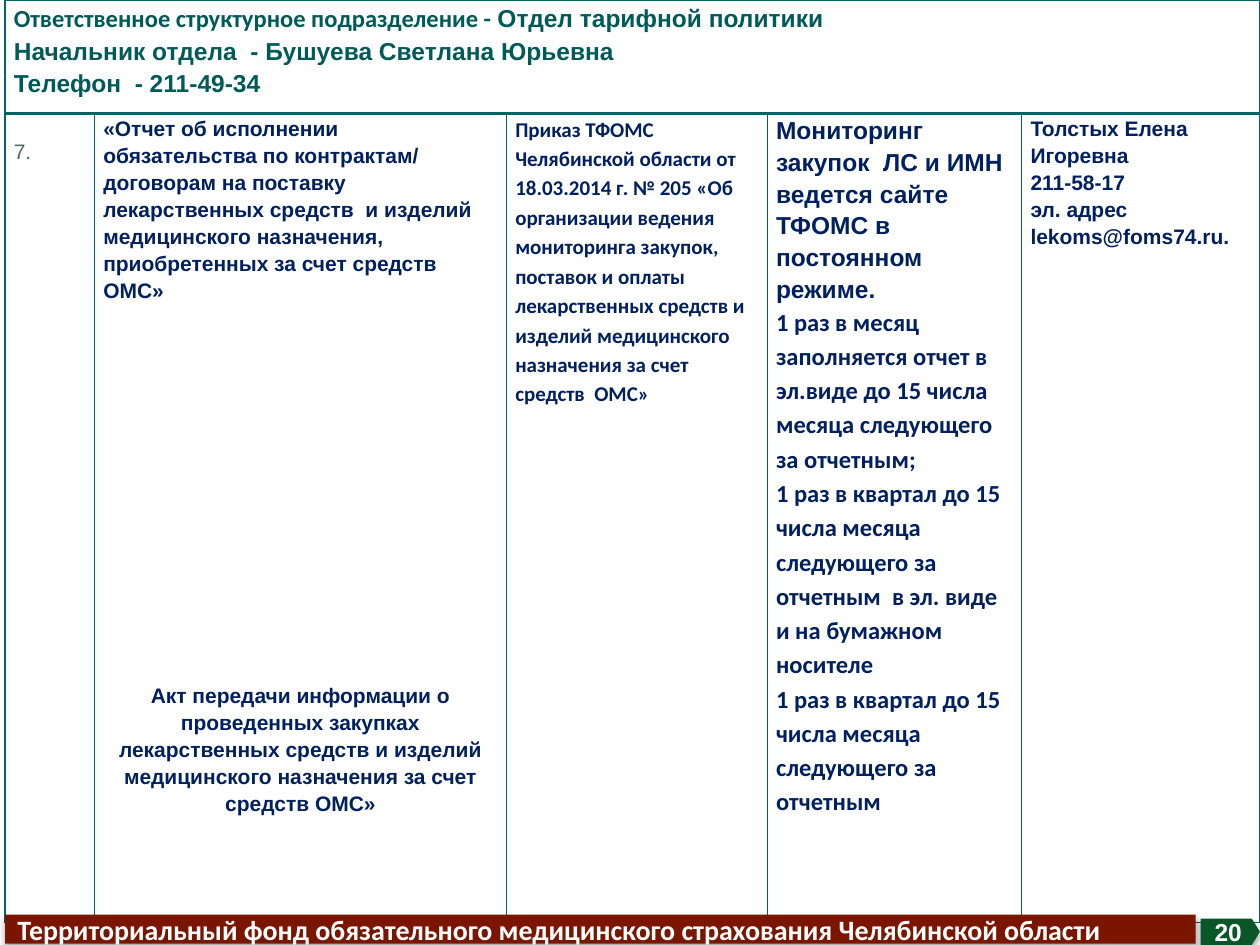
from lxml import etree
from pptx import Presentation
from pptx.dml.color import RGBColor
from pptx.enum.shapes import MSO_SHAPE
from pptx.enum.text import MSO_ANCHOR, PP_ALIGN
from pptx.oxml.ns import qn
from pptx.util import Inches, Pt

LEFT, CENTER = PP_ALIGN.LEFT, PP_ALIGN.CENTER
TOP, MIDDLE = MSO_ANCHOR.TOP, MSO_ANCHOR.MIDDLE
RECTANGLE, PENTAGON = MSO_SHAPE.RECTANGLE, MSO_SHAPE.PENTAGON

TEAL = RGBColor(0x00, 0x5A, 0x58)
BORDER = RGBColor(0x00, 0x64, 0x62)
GRAY = RGBColor(0x4D, 0x68, 0x68)
NAVY = RGBColor(0x00, 0x20, 0x60)
WHITE = RGBColor(0xFF, 0xFF, 0xFF)
MAROON = RGBColor(0x7A, 0x16, 0x00)
GREEN = RGBColor(0x09, 0x57, 0x29)
BLACK = RGBColor(0x00, 0x00, 0x00)

COLUMN_WIDTHS = [0.71, 3.27, 2.07, 2.02, 1.89]
ROW_HEIGHTS = [0.9, 6.42]

REPORT = ("«Отчет об исполнении  обязательства по контрактам/ договорам на поставку "
          "лекарственных средств  и изделий медицинского назначения, "
          "приобретенных за счет средств ОМС»")
ACT = ("Акт передачи информации о проведенных закупках лекарственных средств "
       "и изделий медицинского назначения за счет средств ОМС»")
ORDER = ("Приказ ТФОМС Челябинской области от 18.03.2014 г. № 205 «Об организации "
         "ведения мониторинга закупок, поставок и оплаты лекарственных средств "
         "и изделий медицинского назначения за счет средств  ОМС»")
MONITORING = "Мониторинг закупок  ЛС и ИМН  ведется сайте ТФОМС в постоянном режиме."
DEADLINES = [
    "1 раз в месяц заполняется отчет в  эл.виде до 15 числа месяца следующего за отчетным;",
    "1 раз в квартал до 15 числа месяца следующего за отчетным  в эл. виде "
    "и на бумажном носителе",
    "1 раз в квартал до 15 числа месяца следующего за отчетным",
]
CONTACTS = ["Толстых Елена Игоревна", "211-58-17", "эл. адрес lekoms@foms74.ru."]
FOOTER = "Территориальный фонд обязательного медицинского страхования Челябинской области"


def write(frame, text, size=12, font="Arial", color=NAVY, bold=True, align=LEFT,
          spacing=1.15, before=0, same_line=False):
    """Add text to a frame, in its last paragraph or in a new one."""
    paragraph = frame.paragraphs[-1]
    if paragraph.runs and not same_line:
        paragraph = frame.add_paragraph()
    paragraph.alignment = align
    paragraph.line_spacing = spacing
    paragraph.space_before = Pt(before)
    run = paragraph.add_run()
    run.text = text
    run.font.size = Pt(size)
    run.font.name = font
    run.font.bold = bold
    run.font.color.rgb = color


def set_borders(cell, **widths):
    """Draw cell borders; widths in points, keyed by side (L, R, T, B)."""
    properties = cell._tc.get_or_add_tcPr()
    for position, (side, width) in enumerate(widths.items()):
        line = etree.Element(qn(f"a:ln{side}"), w=str(Pt(width)))
        fill = etree.SubElement(line, qn("a:solidFill"))
        etree.SubElement(fill, qn("a:srgbClr"), val=str(BORDER))
        properties.insert(position, line)


def add_report_table(slide):
    table = slide.shapes.add_table(
        len(ROW_HEIGHTS), len(COLUMN_WIDTHS), Inches(0.04), 0,
        Inches(sum(COLUMN_WIDTHS)), Inches(sum(ROW_HEIGHTS))).table
    table.first_row = table.horz_banding = False
    for column, width in zip(table.columns, COLUMN_WIDTHS):
        column.width = Inches(width)
    for row, height in zip(table.rows, ROW_HEIGHTS):
        row.height = Inches(height)
    for cell in table.iter_cells():
        cell.margin_left = cell.margin_right = Inches(0.07)
        cell.margin_top = cell.margin_bottom = 0
        cell.vertical_anchor = TOP
        cell.fill.solid()
        cell.fill.fore_color.rgb = WHITE
    for header, body in zip(table.rows[0].cells, table.rows[1].cells):
        set_borders(header, L=1, R=1, T=1, B=2)
        set_borders(body, L=1, R=1, T=2, B=1)
    table.cell(0, 0).merge(table.cell(0, len(COLUMN_WIDTHS) - 1))
    return table


def fill_report_table(table):
    # Department
    department = table.cell(0, 0).text_frame
    write(department, "Ответственное структурное подразделение - ",
          size=14, font="Calibri", color=TEAL)
    write(department, "Отдел тарифной политики", size=14, color=TEAL, same_line=True)
    for line in ["Начальник отдела  - Бушуева Светлана Юрьевна", "Телефон  - 211-49-34"]:
        write(department, line, size=14, color=TEAL)

    # Report row
    number_cell = table.cell(1, 0)
    number_cell.margin_top = Inches(0.19)
    number, documents, order, schedule, contacts = [
        cell.text_frame for cell in table.rows[1].cells]
    write(number, "7.", color=GRAY, bold=False)
    write(documents, REPORT)
    write(documents, ACT, align=CENTER, before=216)
    write(order, ORDER, font="Calibri")
    write(schedule, MONITORING, size=14)
    for deadline in DEADLINES:
        write(schedule, deadline, size=14, font="Calibri")
    for line in CONTACTS:
        write(contacts, line)


def add_shadow(shape):
    effects = etree.SubElement(shape._element.spPr, qn("a:effectLst"))
    shadow = etree.SubElement(effects, qn("a:outerShdw"), blurRad=str(Pt(3.5)),
                              dist=str(Pt(2.2)), dir="5400000", rotWithShape="0")
    color = etree.SubElement(shadow, qn("a:srgbClr"), val=str(BLACK))
    etree.SubElement(color, qn("a:alpha"), val="32000")


def add_label(slide, kind, left, top, width, height, fill, text, **text_format):
    label = slide.shapes.add_shape(
        kind, Inches(left), Inches(top), Inches(width), Inches(height))
    label.fill.solid()
    label.fill.fore_color.rgb = fill
    label.line.fill.background()
    add_shadow(label)
    frame = label.text_frame
    frame.word_wrap = True
    frame.vertical_anchor = MIDDLE
    write(frame, text, color=WHITE, spacing=1, **text_format)
    return label


def main():
    presentation = Presentation()
    presentation.slide_width = Inches(10)
    presentation.slide_height = Inches(7.5)
    slide = presentation.slides.add_slide(presentation.slide_layouts[6])

    fill_report_table(add_report_table(slide))

    # Footer band and page number
    add_label(slide, RECTANGLE, 0.04, 7.26, 9.45, 0.23, MAROON, FOOTER,
              size=16, font="Calibri")
    page_number = add_label(slide, PENTAGON, 9.53, 7.29, 0.47, 0.21, GREEN, "20",
                            size=14, align=CENTER)
    page_number.adjustments[0] = 0.31

    presentation.save("out.pptx")


if __name__ == "__main__":
    main()
